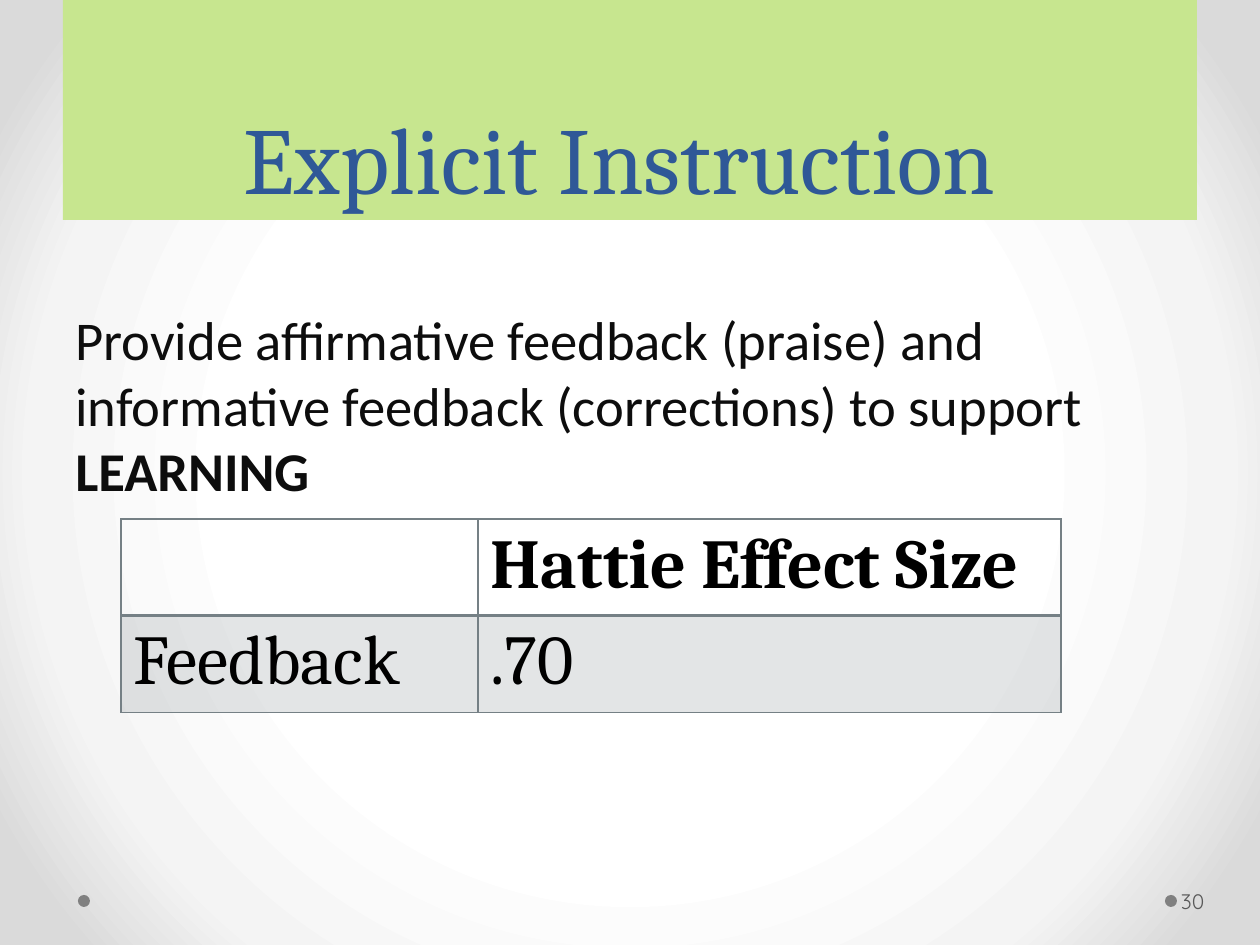
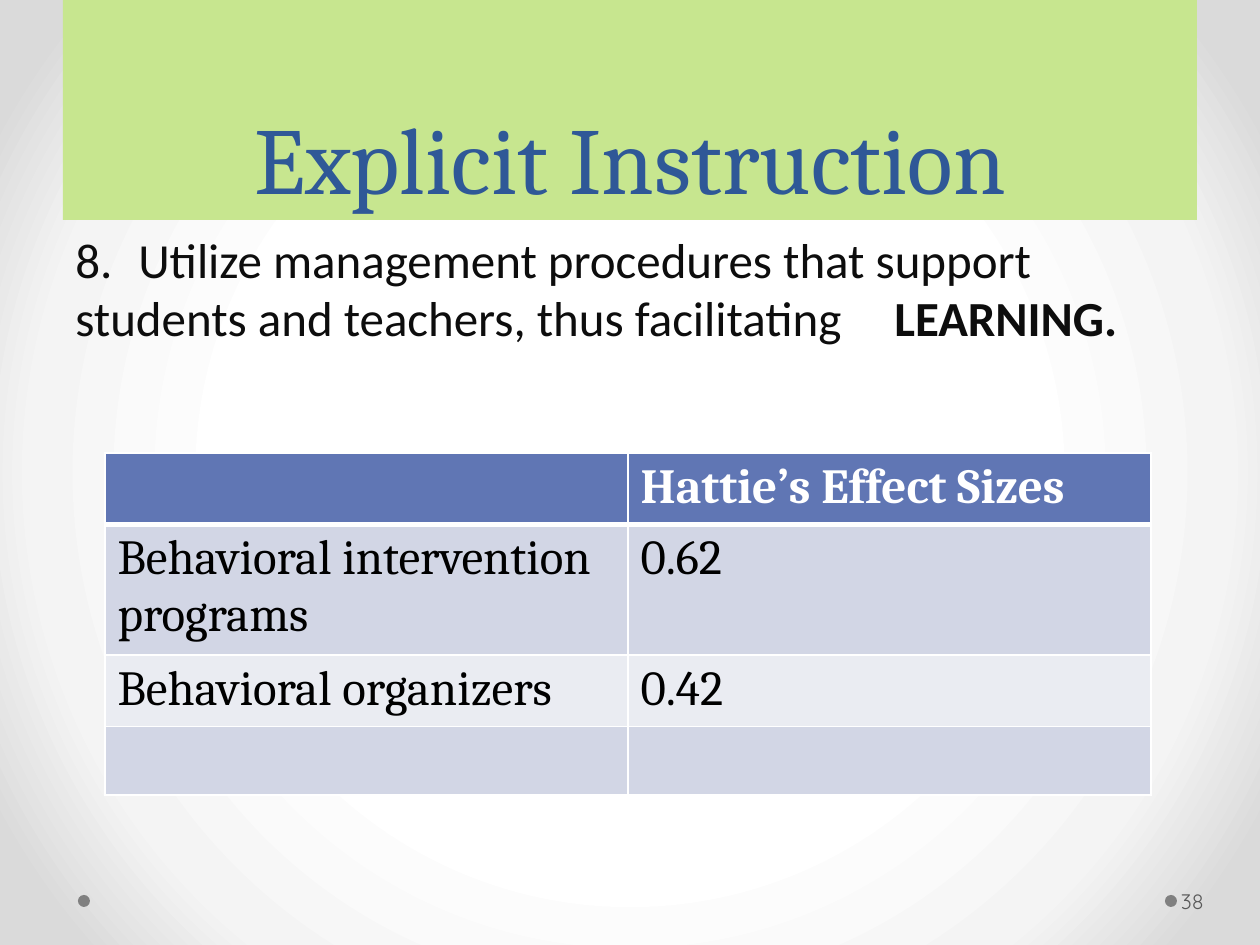
from lxml.etree import SubElement
from pptx import Presentation
from pptx.dml.color import RGBColor
from pptx.enum.shapes import MSO_SHAPE as Shape
from pptx.enum.text import MSO_ANCHOR as Anchor, PP_ALIGN as Align
from pptx.oxml import parse_xml
from pptx.oxml.ns import nsdecls, qn
from pptx.util import Emu, Pt

PX = 914400 / 126
COLORS = {
    "band": "C7E68F", "title": "2F5897", "body": "0D0D0D", "dot": "808080",
    "number": "595959", "black": "000000", "white": "FFFFFF",
    "grid": "758085", "header": "6076B4", "odd": "D2D6E5", "even": "EAECF2",
}
BACKDROP = [(50, "FFFFFF"), (76, "F4F4F4"), (92, "DADADA")]
TITLE_BOX = (63, 0, 1134, 220)
NUMBER_BOX = (1177, 876, 77, 50)
DOT_SIZE = 12
DOT_TOP = 895
DOT_LEFTS = (78, 1165)


def px(length):
    return Emu(round(length * PX))


def rgb(name):
    return RGBColor.from_string(COLORS[name])


def write(frame, text, *, size, font, color, bold=False, strong="", align=Align.LEFT,
          anchor=Anchor.TOP, line=None):
    """Fill a text frame with one paragraph; `strong` is a bold ending."""
    frame.word_wrap = True
    frame.vertical_anchor = anchor
    paragraph = frame.paragraphs[0]
    paragraph.alignment = align
    if line:
        paragraph.line_spacing = Pt(line)
    for part, is_bold in ((text, bold), (strong, True)):
        if part:
            run = paragraph.add_run()
            run.text = part
            run.font.size = Pt(size)
            run.font.name = font
            run.font.bold = is_bold
            run.font.color.rgb = rgb(color)


def add_filled(slide, kind, box, color):
    shape = slide.shapes.add_shape(kind, *map(px, box))
    shape.shadow.inherit = False
    shape.fill.solid()
    shape.fill.fore_color.rgb = rgb(color)
    shape.line.fill.background()
    return shape


def paint_backdrop(master):
    master.background.fill.solid()
    stops = "".join(f'<a:gs pos="{pos * 1000}"><a:srgbClr val="{color}"/></a:gs>'
                    for pos, color in BACKDROP)
    gradient = parse_xml(
        f'<a:gradFill {nsdecls("a")} rotWithShape="1"><a:gsLst>{stops}</a:gsLst>'
        '<a:path path="circle"><a:fillToRect l="50000" t="50000" r="50000" b="50000"/>'
        '</a:path></a:gradFill>')
    properties = master.element.find(".//" + qn("p:bgPr"))
    properties.replace(properties[0], gradient)


def add_title(slide, box, title):
    band = add_filled(slide, Shape.RECTANGLE, box, "band")
    write(band.text_frame, title, size=54, font="Cambria", color="title",
          align=Align.CENTER, anchor=Anchor.BOTTOM, line=58)


def add_footer(slide, box, number):
    for left in DOT_LEFTS:
        add_filled(slide, Shape.OVAL, (left, DOT_TOP, DOT_SIZE, DOT_SIZE), "dot")
    frame = slide.shapes.add_textbox(*map(px, box)).text_frame
    frame.margin_left = px(4)
    frame.margin_right = px(6)
    write(frame, str(number), size=12, font="Quicksand", color="number",
          anchor=Anchor.MIDDLE)


def add_statement(slide, box, text, strong, size):
    frame = slide.shapes.add_textbox(*map(px, box)).text_frame
    write(frame, text, strong=strong, size=size, font="Calibri", color="body")


def set_borders(cell, color, widths):
    """Draw the sides of a cell; widths are points for left, right, top, bottom."""
    properties = cell._tc.get_or_add_tcPr()
    for index, (side, width) in enumerate(zip("LRTB", widths)):
        properties.insert(index, parse_xml(
            f'<a:ln{side} {nsdecls("a")} w="{Pt(width)}"><a:solidFill>'
            f'<a:srgbClr val="{COLORS[color]}"/></a:solidFill></a:ln{side}>'))


def fill_cell(cell, color, alpha):
    if color is None:
        cell.fill.background()
        return
    cell.fill.solid()
    cell.fill.fore_color.rgb = rgb(color)
    if alpha < 100:
        tint = cell._tc.tcPr.find(".//" + qn("a:srgbClr"))
        SubElement(tint, qn("a:alpha"), val=str(alpha * 1000))


def add_effect_table(slide, corner, widths, heights, rows, *, size, fills, grid,
                     head_line, head_color, alpha=100):
    table = slide.shapes.add_table(len(rows), len(widths), *map(px, corner),
                                   px(sum(widths)), px(sum(heights))).table
    table.first_row = table.horz_banding = False
    for column, width in zip(table.columns, widths):
        column.width = px(width)
    for r, (texts, height, fill) in enumerate(zip(rows, heights, fills)):
        table.rows[r].height = px(height)
        for c, text in enumerate(texts):
            cell = table.cell(r, c)
            fill_cell(cell, fill, alpha)
            set_borders(cell, grid, (1, 1, head_line if r == 1 else 1,
                                     head_line if r == 0 else 1))
            write(cell.text_frame, text, size=size, font="Cambria", bold=r == 0,
                  color=head_color if r == 0 else "black")


def start_slide(deck, title, number):
    slide = deck.slides.add_slide(deck.slide_layouts[6])
    add_title(slide, TITLE_BOX, title)
    add_footer(slide, NUMBER_BOX, number)
    return slide


def build_feedback(deck):
    slide = start_slide(deck, "Explicit Instruction ", 30)
    add_statement(slide, (63, 300, 1134, 210),
                  "Provide affirmative feedback (praise) and informative feedback "
                  "(corrections) to support ", "LEARNING", 31.2)
    add_effect_table(slide, (121, 519), (357, 583), (92, 94),
                     [("", "Hattie Effect Size"), ("Feedback", ".70")],
                     size=40, fills=(None, "grid"), alpha=20, grid="grid",
                     head_line=2, head_color="black")


def build_management(deck):
    slide = start_slide(deck, "Explicit Instruction", 38)
    add_statement(slide, (63, 223, 1134, 140),
                  "8.\tUtilize management procedures that support students and "
                  "teachers, thus facilitating \t", "LEARNING.", 28)
    add_effect_table(slide, (105, 453), (523, 523), (68, 125, 69, 69),
                     [("", "Hattie’s Effect Sizes"),
                      ("Behavioral intervention programs", "0.62"),
                      ("Behavioral organizers", "0.42"),
                      ("", "")],
                     size=28, fills=("header", "odd", "even", "odd"), grid="white",
                     head_line=3, head_color="white")


def main():
    deck = Presentation()
    deck.slide_width, deck.slide_height = px(1260), px(945)
    paint_backdrop(deck.slide_master)
    build_feedback(deck)
    build_management(deck)
    deck.save("out.pptx")


if __name__ == "__main__":
    main()
